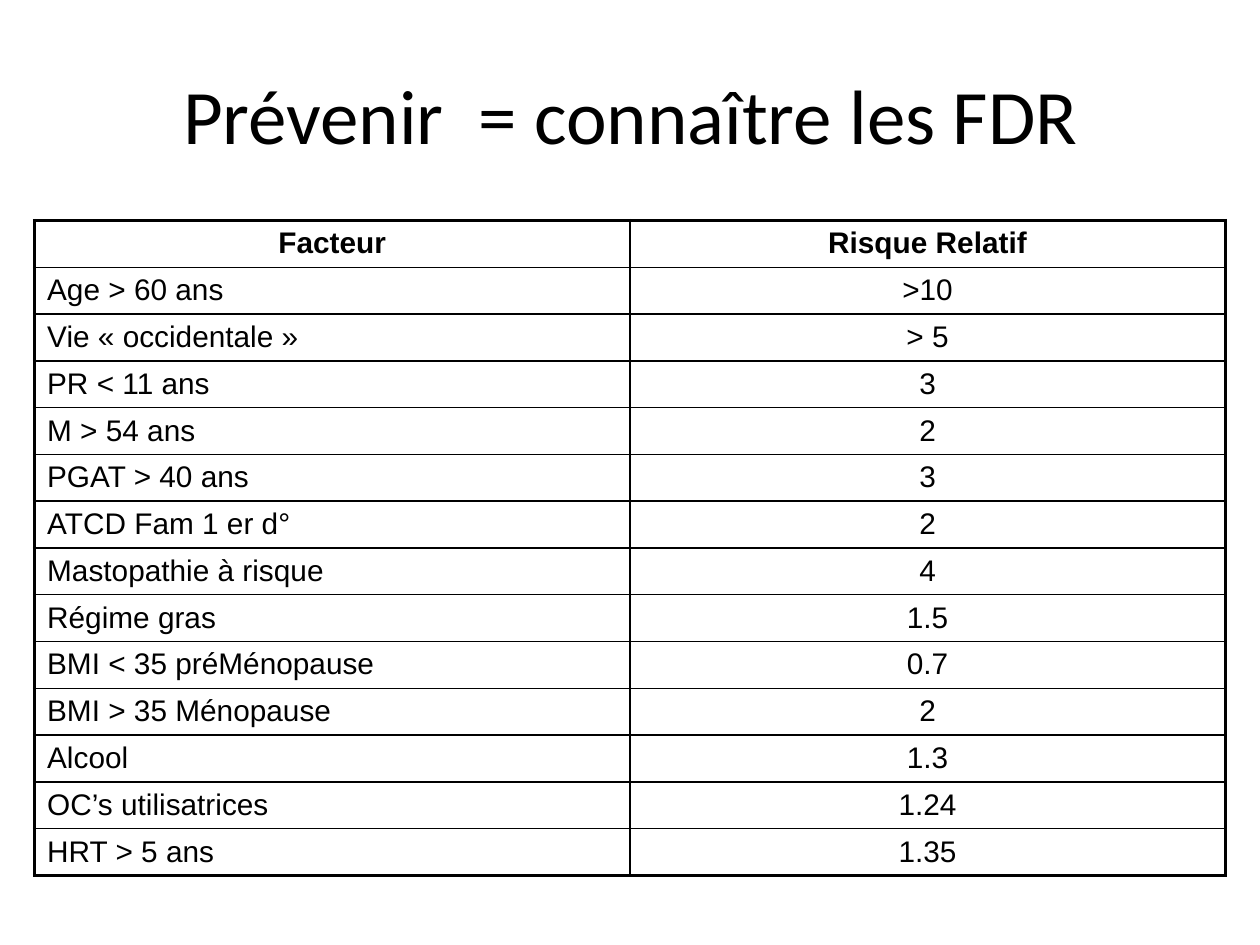
from dataclasses import dataclass

from lxml import etree
from pptx import Presentation
from pptx.dml.color import RGBColor
from pptx.enum.text import MSO_ANCHOR, PP_ALIGN
from pptx.oxml.ns import qn
from pptx.util import Pt

LEFT, CENTER = PP_ALIGN.LEFT, PP_ALIGN.CENTER
MIDDLE = MSO_ANCHOR.MIDDLE
TITLE_ONLY = 5


@dataclass(frozen=True)
class Theme:
    ink: str = "000000"
    title_font: str = "Calibri"
    title_size: float = 44
    table_font: str = "Arial"
    table_size: float = 17
    frame_line: float = 2.25
    grid_line: float = 1


THEME = Theme()

TITLE = "Prévenir  = connaître les FDR"
RISKS = [
    ("Facteur", "Risque Relatif"),
    ("Age > 60 ans", ">10"),
    ("Vie « occidentale »", "> 5"),
    ("PR < 11 ans", "3"),
    ("M > 54 ans", "2"),
    ("PGAT > 40 ans", "3"),
    ("ATCD Fam 1 er d°", "2"),
    ("Mastopathie à risque", "4"),
    ("Régime gras", "1.5"),
    ("BMI < 35 préMénopause", "0.7"),
    ("BMI > 35 Ménopause", "2"),
    ("Alcool", "1.3"),
    ("OC’s utilisatrices", "1.24"),
    ("HRT > 5 ans", "1.35"),
]


def format_para(para, font, size, align, bold=False):
    para.alignment = align
    for span in para.runs:
        span.font.name = font
        span.font.size = Pt(size)
        span.font.bold = bold
        span.font.color.rgb = RGBColor.from_string(THEME.ink)


def set_borders(cell, on_frame):
    """Draw a heavy line on each side that lies on the table's frame."""
    properties = cell._tc.get_or_add_tcPr()
    for side, heavy in zip("LRTB", on_frame):
        width = Pt(THEME.frame_line if heavy else THEME.grid_line)
        line = etree.SubElement(properties, qn(f"a:ln{side}"), w=str(width))
        fill = etree.SubElement(line, qn("a:solidFill"))
        etree.SubElement(fill, qn("a:srgbClr"), val=THEME.ink)


def add_title(page, left, top, width, height):
    title = page.shapes.title
    title.left, title.top = Pt(left), Pt(top)
    title.width, title.height = Pt(width), Pt(height)
    frame = title.text_frame
    frame.text = TITLE
    frame.vertical_anchor = MIDDLE
    format_para(frame.paragraphs[0], THEME.title_font, THEME.title_size, CENTER)


def add_risk_table(page, left, top, width, height):
    row_count, column_count = len(RISKS), len(RISKS[0])
    table = page.shapes.add_table(
        row_count, column_count, Pt(left), Pt(top), Pt(width), Pt(height)
    ).table
    table.first_row = table.horz_banding = False
    for column in table.columns:
        column.width = Pt(width / column_count)
    for row_index, values in enumerate(RISKS):
        table.rows[row_index].height = Pt(height / row_count)
        is_header = row_index == 0
        for column_index, value in enumerate(values):
            cell = table.cell(row_index, column_index)
            on_frame = (
                column_index == 0,
                column_index == column_count - 1,
                is_header,
                row_index == row_count - 1,
            )
            set_borders(cell, on_frame)
            cell.fill.background()
            cell.text_frame.text = value
            align = CENTER if is_header or column_index else LEFT
            format_para(cell.text_frame.paragraphs[0], THEME.table_font,
                        THEME.table_size, align, is_header)


def main():
    deck = Presentation()
    deck.slide_width, deck.slide_height = Pt(720), Pt(540)
    page = deck.slides.add_slide(deck.slide_layouts[TITLE_ONLY])
    add_title(page, 36.5, 20, 648, 90)
    add_risk_table(page, 19.75, 126, 680.4, 374.4)
    deck.save("out.pptx")


if __name__ == "__main__":
    main()
